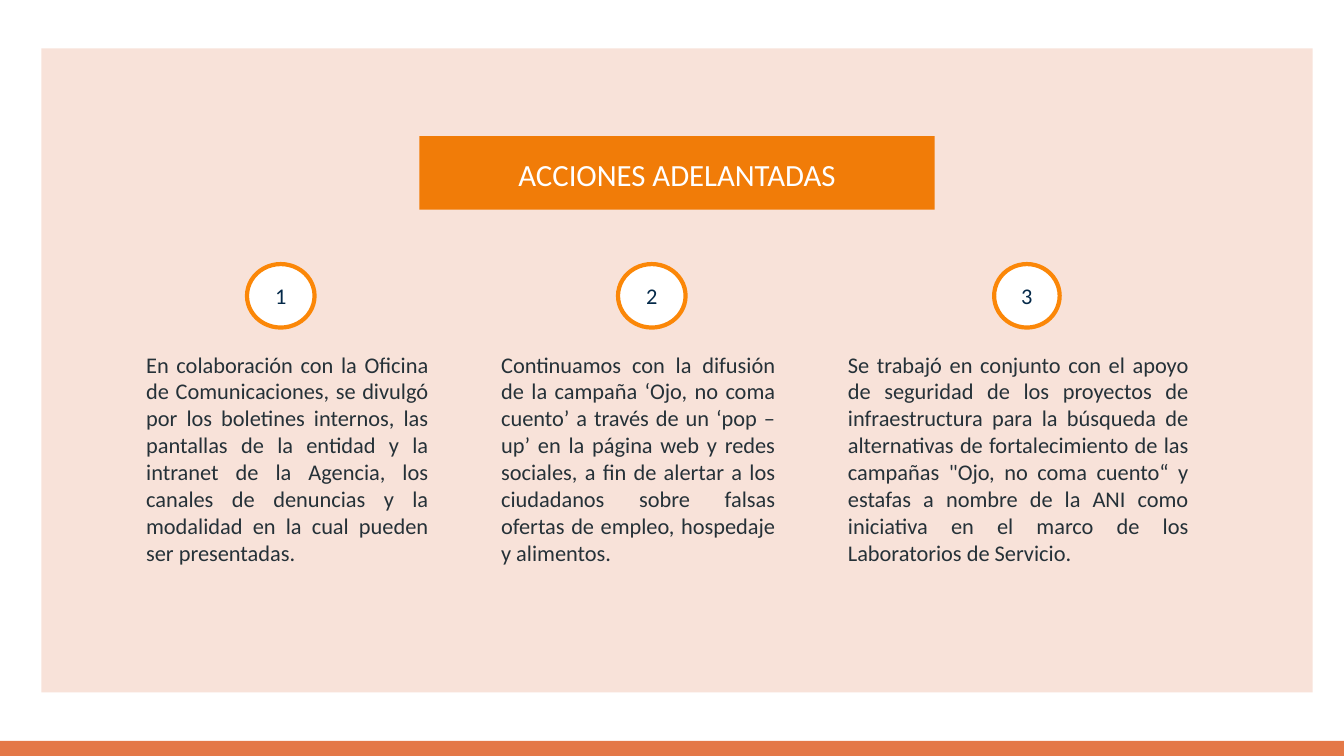
from dataclasses import dataclass

import pptx
import pptx.dml.color
import pptx.enum.shapes
import pptx.enum.text
import pptx.util

Inches = pptx.util.Inches
Pt = pptx.util.Pt
Align = pptx.enum.text.PP_ALIGN
Anchor = pptx.enum.text.MSO_ANCHOR
Preset = pptx.enum.shapes.MSO_SHAPE

FONT = "Calibri"
WHITE = "FFFFFF"
BADGE_TOP, BADGE_HEIGHT = 2.62, 0.63
TEXT_TOP, TEXT_HEIGHT = 3.47, 2.17


@dataclass(frozen=True)
class Action:
    badge_left: float
    badge_width: float
    text_left: float
    text_width: float
    text: str


ACTIONS = [
    Action(2.45, 0.67, 1.45, 2.8,
           "En colaboración con la Oficina de Comunicaciones, se divulgó por los "
           "boletines internos, las pantallas de la entidad y la intranet de la "
           "Agencia, los canales de denuncias y la modalidad en la cual pueden "
           "ser presentadas."),
    Action(6.13, 0.67, 4.97, 2.72,
           "Continuamos con la difusión de la campaña ‘Ojo, no coma cuento’ a "
           "través de un ‘pop – up’ en la página web y redes sociales, a fin de "
           "alertar a los ciudadanos sobre falsas ofertas de empleo, hospedaje "
           "y alimentos."),
    Action(9.86, 0.65, 8.41, 3.38,
           "Se trabajó en conjunto con el apoyo de seguridad de los proyectos de "
           "infraestructura para la búsqueda de alternativas de fortalecimiento "
           "de las campañas \"Ojo, no coma cuento“ y estafas a nombre de la ANI "
           "como iniciativa en el marco de los Laboratorios de Servicio."),
]


def color(value: str) -> pptx.dml.color.RGBColor:
    return pptx.dml.color.RGBColor.from_string(value)


def add_filled(slide, preset, left: float, top: float, width: float,
               height: float, fill: str):
    shape = slide.shapes.add_shape(
        preset, Inches(left), Inches(top), Inches(width), Inches(height))
    shape.shadow.inherit = False
    shape.fill.solid()
    shape.fill.fore_color.rgb = color(fill)
    shape.line.fill.background()
    return shape


def write(box, text: str, size: float, text_color: str, alignment,
          anchor=Anchor.TOP, top_inset: float = 0, wrap: bool = True) -> None:
    frame = box.text_frame
    frame.word_wrap = wrap
    frame.vertical_anchor = anchor
    frame.margin_left = frame.margin_right = frame.margin_bottom = 0
    frame.margin_top = Inches(top_inset)
    para = frame.paragraphs[0]
    para.alignment = alignment
    span = para.add_run()
    span.text = text
    span.font.name = FONT
    span.font.size = Pt(size)
    span.font.color.rgb = color(text_color)


def add_action(slide, number: int, action: Action) -> None:
    badge = add_filled(slide, Preset.OVAL, action.badge_left, BADGE_TOP,
                       action.badge_width, BADGE_HEIGHT, WHITE)
    badge.line.color.rgb = color("FB8708")
    badge.line.width = Pt(3)
    write(badge, str(number), 16, "042949", Align.CENTER, Anchor.MIDDLE,
          wrap=False)
    box = slide.shapes.add_textbox(
        Inches(action.text_left), Inches(TEXT_TOP),
        Inches(action.text_width), Inches(TEXT_HEIGHT))
    write(box, action.text, 16, "253138", Align.JUSTIFY, top_inset=0.01)


def main() -> None:
    deck = pptx.Presentation()
    deck.slide_width = Inches(13.33)
    deck.slide_height = Inches(7.5)
    page = deck.slides.add_slide(deck.slide_layouts[6])
    add_filled(page, Preset.RECTANGLE, 0, 7.35, 13.33, 0.15, "E47847")
    add_filled(page, Preset.RECTANGLE, 0.41, 0.48, 12.61, 6.39, "F8E2D9")
    title = add_filled(page, Preset.RECTANGLE, 4.16, 1.35, 5.11, 0.73, "F17C08")
    write(title, "ACCIONES ADELANTADAS", 22, WHITE, Align.CENTER, top_inset=0.2)
    for number, action in enumerate(ACTIONS, start=1):
        add_action(page, number, action)
    deck.save("out.pptx")


if __name__ == "__main__":
    main()
